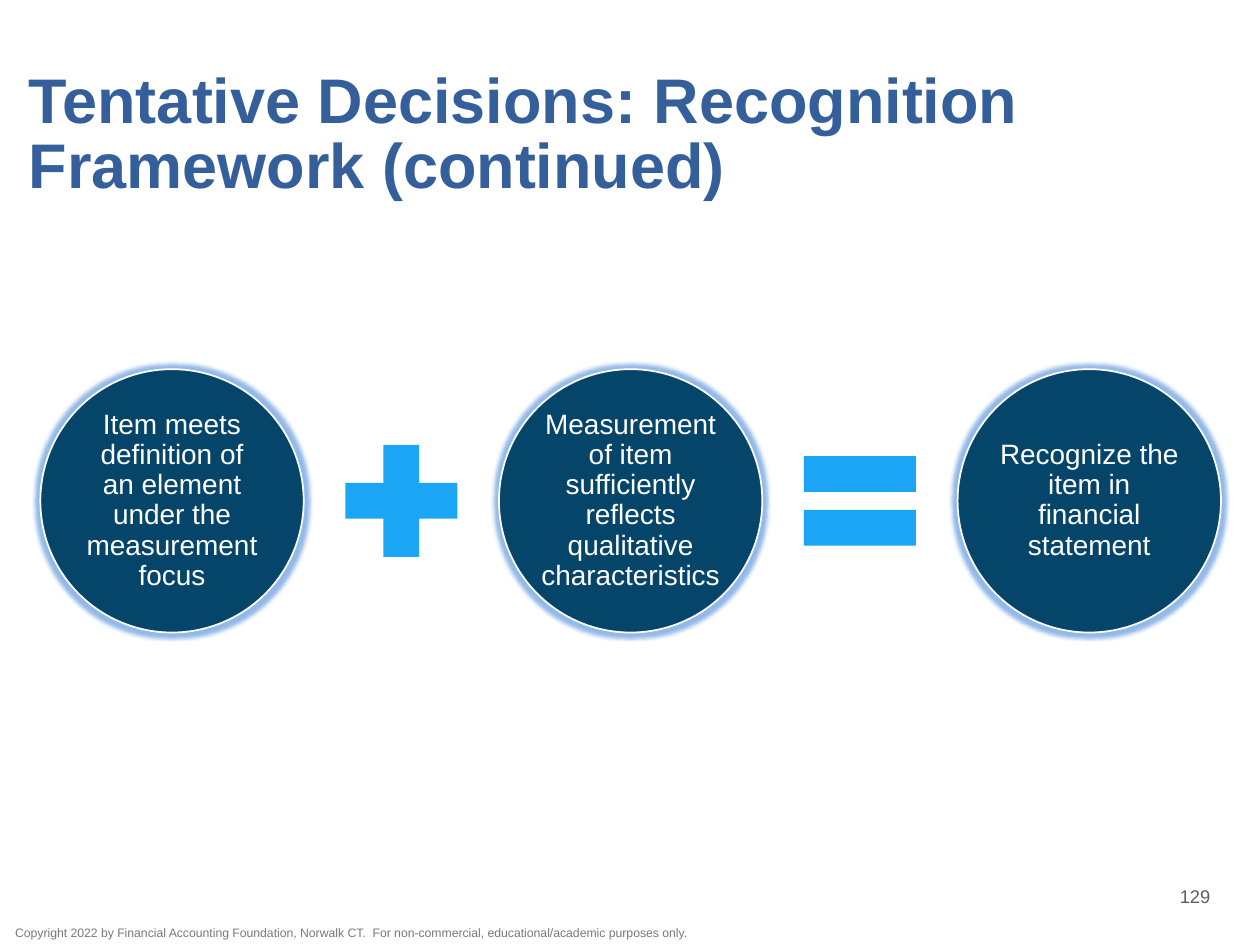
from lxml.etree import SubElement
from pptx import Presentation
from pptx.dml.color import RGBColor
from pptx.enum.shapes import MSO_SHAPE as Preset
from pptx.enum.text import MSO_ANCHOR as Anchor, PP_ALIGN as Align
from pptx.oxml.ns import qn
from pptx.util import Inches, Pt

NAVY, SKY, WHITE, GLOW = "054569", "1AA6F4", "FFFFFF", "4A8AD8"
TITLE_BLUE, GREY, LIGHT_GREY = "355F9A", "5F5F5F", "78797B"


def rgb(value):
    return RGBColor.from_string(value)


def write_text(frame, text, size, color, font="Arial", bold=False, align=Align.LEFT,
               anchor=Anchor.MIDDLE, spacing=None, insets=(0, 0, 0, 0)):
    frame.word_wrap = True
    frame.vertical_anchor = anchor
    (frame.margin_left, frame.margin_top,
     frame.margin_right, frame.margin_bottom) = map(Inches, insets)
    paragraph = frame.paragraphs[0]
    paragraph.alignment = align
    paragraph.line_spacing = spacing
    run = paragraph.add_run()
    run.text = text
    run.font.name = font
    run.font.size = Pt(size)
    run.font.bold = bold
    run.font.color.rgb = rgb(color)


class EquationSlide:
    disc_size = 2.09
    sign_size = 1.21
    middle = 3.975

    def __init__(self, slide):
        self.slide = slide

    def label(self, box, text, **style):
        area = self.slide.shapes.add_textbox(*map(Inches, box))
        write_text(area.text_frame, text, **style)

    def solid(self, preset, left, size, color):
        top = self.middle - size / 2
        solid = self.slide.shapes.add_shape(
            preset, Inches(left), Inches(top), Inches(size), Inches(size))
        solid.shadow.inherit = False
        solid.fill.solid()
        solid.fill.fore_color.rgb = rgb(color)
        solid.line.fill.background()
        return solid

    def sign(self, preset, left):
        self.solid(preset, left, self.sign_size, SKY)

    def disc(self, left, text):
        disc = self.solid(Preset.OVAL, left, self.disc_size, NAVY)
        disc.line.color.rgb = rgb(WHITE)
        disc.line.width = Pt(1)
        effects = disc._element.spPr.find(qn("a:effectLst"))
        glow = SubElement(effects, qn("a:glow"), rad=str(Pt(5)))
        tint = SubElement(glow, qn("a:srgbClr"), val=GLOW)
        SubElement(tint, qn("a:alpha"), val="60000")
        write_text(disc.text_frame, text, size=16, color=WHITE,
                   align=Align.CENTER, spacing=0.9, insets=(0.02,) * 4)


def main():
    deck = Presentation()
    deck.slide_width, deck.slide_height = Inches(10), Inches(7.5)
    page = EquationSlide(deck.slides.add_slide(deck.slide_layouts[6]))

    page.label((0.12, 7.34, 5.43, 0.14),
               "Copyright 2022 by Financial Accounting Foundation, Norwalk CT.  "
               "For non-commercial, educational/academic purposes only.",
               size=7, color=LIGHT_GREY, anchor=Anchor.TOP)
    page.label((0.13, 0.59, 9.49, 0.98),
               "Tentative Decisions: Recognition Framework (continued)",
               size=36, color=TITLE_BLUE, bold=True, spacing=Pt(37),
               insets=(0.1, 0, 0, 0))
    page.label((8.97, 6.95, 1.03, 0.33), "129", size=10.5, color=GREY,
               align=Align.CENTER, insets=(0.1, 0.05, 0.1, 0.05))

    terms = [
        ("Item meets definition of an element under the measurement focus", Preset.MATH_PLUS),
        ("Measurement of item sufficiently reflects qualitative characteristics",
         Preset.MATH_EQUAL),
        ("Recognize the item in financial statement", None),
    ]
    start, gap = 0.32, 0.17
    pitch = page.disc_size + page.sign_size + 2 * gap
    for index, (condition, operator) in enumerate(terms):
        left = start + index * pitch
        page.disc(left, condition)
        if operator is not None:
            page.sign(operator, left + page.disc_size + gap)

    deck.save("out.pptx")


if __name__ == "__main__":
    main()
